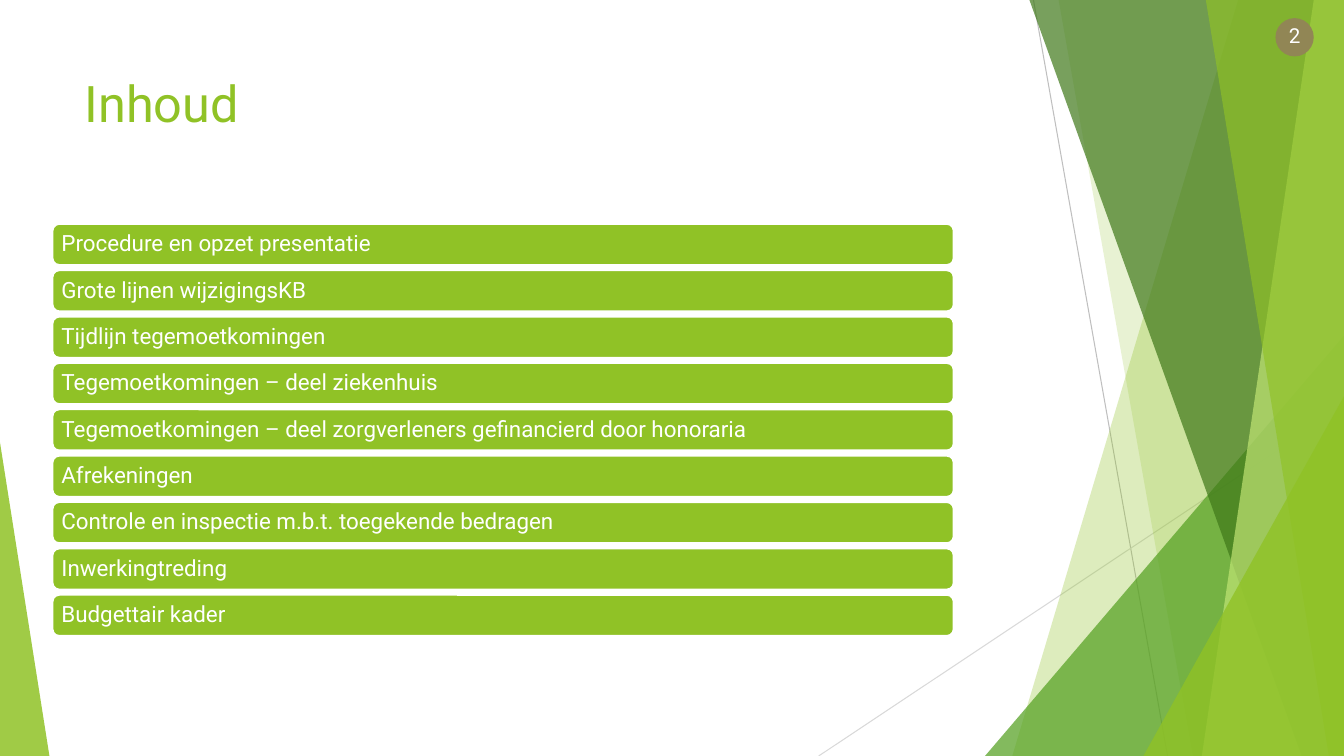
from lxml import etree
from pptx import Presentation
from pptx.dml.color import RGBColor
from pptx.enum.shapes import MSO_CONNECTOR, MSO_SHAPE
from pptx.enum.text import MSO_ANCHOR, PP_ALIGN
from pptx.oxml.ns import qn
from pptx.util import Inches, Pt

STRAIGHT = MSO_CONNECTOR.STRAIGHT
TRIANGLE, ROUNDED, OVAL = MSO_SHAPE.ISOSCELES_TRIANGLE, MSO_SHAPE.ROUNDED_RECTANGLE, MSO_SHAPE.OVAL
TOP, MIDDLE = MSO_ANCHOR.TOP, MSO_ANCHOR.MIDDLE
LEFT, CENTER = PP_ALIGN.LEFT, PP_ALIGN.CENTER

WHITE = RGBColor(0xFF, 0xFF, 0xFF)
LIME = RGBColor(0x90, 0xC2, 0x26)
GREEN = RGBColor(0x54, 0xA0, 0x21)
DARK_GREEN = RGBColor(0x3F, 0x78, 0x19)
PALE_LIME = RGBColor(0xC0, 0xE4, 0x74)
OLIVE = RGBColor(0x91, 0x86, 0x55)
GREY = RGBColor(0xBF, 0xBF, 0xBF)
LIGHT_GREY = RGBColor(0xD9, 0xD9, 0xD9)
FONT = "Roboto"
W, H = 13.33, 7.5

TITLE = "Inhoud"
PAGE = "2"
TOPICS = [
    "Procedure en opzet presentatie",
    "Grote lijnen wijzigingsKB",
    "Tijdlijn tegemoetkomingen",
    "Tegemoetkomingen – deel ziekenhuis",
    "Tegemoetkomingen – deel zorgverleners gefinancierd door honoraria",
    "Afrekeningen",
    "Controle en inspectie m.b.t. toegekende bedragen",
    "Inwerkingtreding",
    "Budgettair kader",
]
BAR_LEFT, BAR_TOP, BAR_W, BAR_H, BAR_PITCH = 0.52, 2.22, 8.94, 0.41, 0.46

# start, end, colour
RAYS = [
    ((10.25, 0), (11.58, H), GREY),
    ((W, 4.03), (8.12, H), LIGHT_GREY),
]
# Back to front. Bands: x at top, x at bottom; each reaches the right edge.
# Triangles: left, top, width, apex position (0 left, 1 right); each stands on the bottom edge.
FACETS = [
    ("band", (12.28, 10.04), LIME, 30),
    ("band", (10.5, 11.83), LIME, 20),
    ("triangle", (9.77, 3.33, 3.56, 1), GREEN, 72),
    ("band", (10.21, 12.91), DARK_GREEN, 70),
    ("band", (13.03, 11.92), PALE_LIME, 70),
    ("band", (11.96, 13.18), LIME, 65),
    ("triangle", (11.34, 3.93, 1.99, 1), LIME, 80),
    ("triangle", (0, 4.39, 0.49, 0), LIME, 85),
]


def paint(sp, color, opacity=100):
    sp.shadow.inherit = False
    sp.fill.solid()
    sp.fill.fore_color.rgb = color
    sp.line.fill.background()
    if opacity < 100:
        clr = sp._element.spPr.find(qn("a:solidFill"))[0]
        etree.SubElement(clr, qn("a:alpha")).set("val", str(opacity * 1000))


def write(sp, text, size, color, align=LEFT, anchor=MIDDLE):
    tf = sp.text_frame
    tf.word_wrap = True
    tf.vertical_anchor = anchor
    p = tf.paragraphs[0]
    p.alignment = align
    r = p.add_run()
    r.text = text
    r.font.size = Pt(size)
    r.font.name = FONT
    r.font.color.rgb = color
    return tf


def set_insets(tf, left, top, right, bottom):
    tf.margin_left, tf.margin_top = Inches(left), Inches(top)
    tf.margin_right, tf.margin_bottom = Inches(right), Inches(bottom)


def add_ray(s, start, end, color):
    line = s.shapes.add_connector(STRAIGHT, *(Inches(v) for v in start + end))
    line.line.color.rgb = color
    line.line.width = Pt(0.75)
    etree.SubElement(line._element.spPr, qn("a:effectLst"))


def add_band(s, top_x, bottom_x):
    corners = [(Inches(x), Inches(y)) for x, y in ((top_x, 0), (W, 0), (W, H), (bottom_x, H))]
    builder = s.shapes.build_freeform(*corners[0])
    builder.add_line_segments(corners[1:], close=True)
    return builder.convert_to_shape()


def add_triangle(s, left, top, width, apex):
    sp = s.shapes.add_shape(TRIANGLE, Inches(left), Inches(top), Inches(width), Inches(H - top))
    sp.adjustments[0] = apex
    return sp


def add_bar(s, row, topic):
    sp = s.shapes.add_shape(ROUNDED, Inches(BAR_LEFT), Inches(BAR_TOP + row * BAR_PITCH),
                            Inches(BAR_W), Inches(BAR_H))
    paint(sp, LIME)
    sp.line.color.rgb = WHITE
    sp.line.width = Pt(1.5)
    tf = write(sp, topic, 16, WHITE)
    set_insets(tf, 0.07, 0.07, 0.07, 0.07)
    tf.paragraphs[0].line_spacing = 0.9


def main():
    prs = Presentation()
    prs.slide_width, prs.slide_height = Inches(W), Inches(H)
    s = prs.slides.add_slide(prs.slide_layouts[5])

    for ray in RAYS:
        add_ray(s, *ray)
    makers = {"band": add_band, "triangle": add_triangle}
    for kind, geometry, color, opacity in FACETS:
        paint(makers[kind](s, *geometry), color, opacity)

    badge = s.shapes.add_shape(OVAL, Inches(12.65), Inches(0.18), Inches(0.38), Inches(0.38))
    paint(badge, OLIVE)
    set_insets(write(badge, PAGE, 14.7, WHITE, CENTER), 0, 0, 0, 0.05)

    title = s.shapes.title
    title.left, title.top = Inches(0.74), Inches(0.67)
    title.width, title.height = Inches(9.69), Inches(1.44)
    write(title, TITLE, 36, LIME, anchor=TOP)

    for row, topic in enumerate(TOPICS):
        add_bar(s, row, topic)
    prs.save("out.pptx")


if __name__ == "__main__":
    main()
